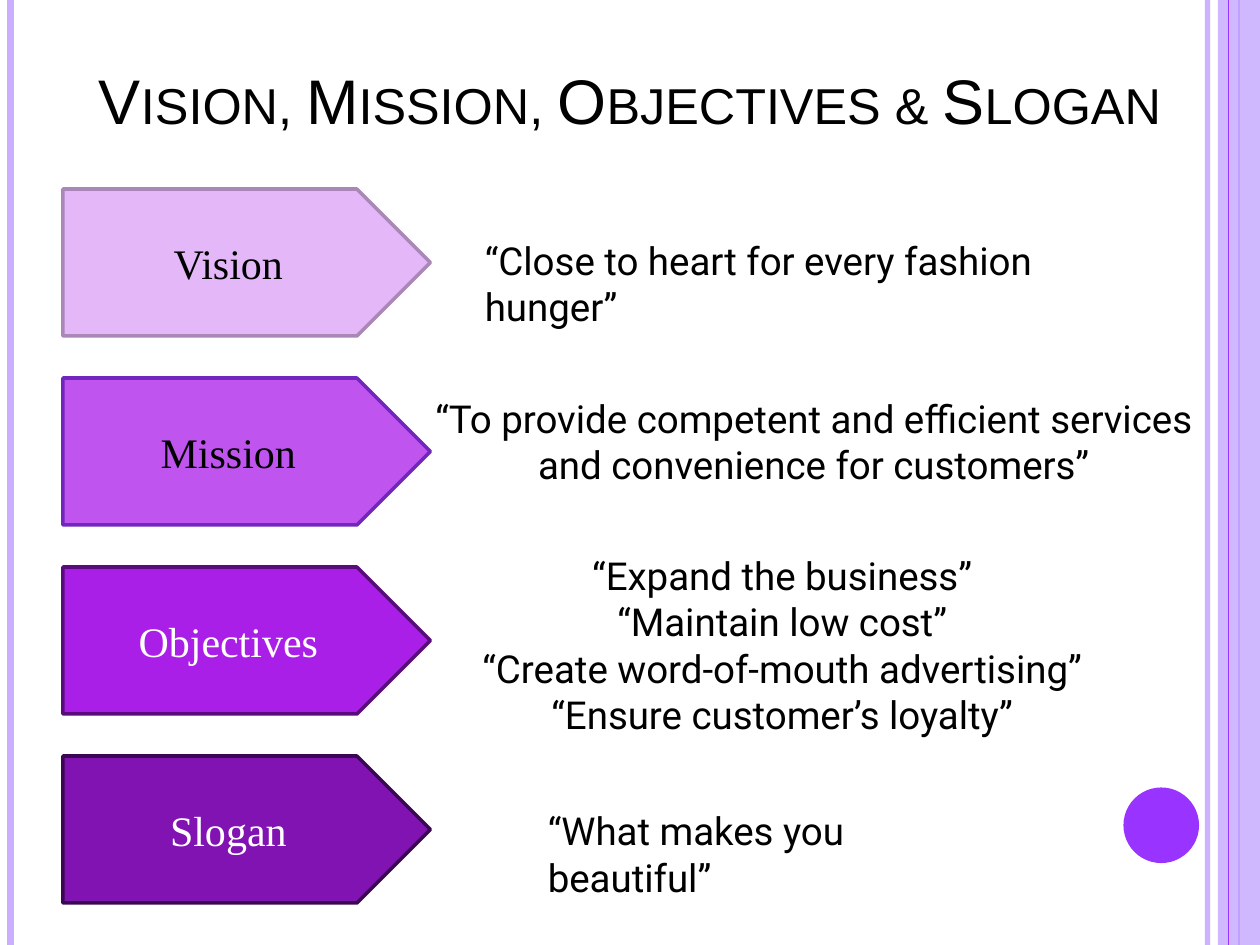
import dataclasses

import lxml.etree
import pptx
import pptx.dml.color
import pptx.enum.shapes
import pptx.enum.text
import pptx.oxml.ns
import pptx.util

ALIGN = pptx.enum.text.PP_ALIGN
ANCHOR = pptx.enum.text.MSO_ANCHOR
SHAPE = pptx.enum.shapes.MSO_SHAPE


@dataclasses.dataclass(frozen=True)
class Theme:
    black: str = "000000"
    white: str = "FFFFFF"
    lilac: str = "CAAEFF"
    violet: str = "9933FF"
    title_font: str = "Arial"
    label_font: str = "Times New Roman"
    quote_font: str = "Roboto"
    title_size: int = 36
    label_size: int = 24
    quote_size: int = 22


class SlideBuilder:
    """Draws styled elements on one slide, placed on a grid of 120 columns by 90 rows."""

    columns, rows = 120, 90

    def __init__(self, presentation, theme):
        self.theme = theme
        self.cell_width = presentation.slide_width / self.columns
        self.cell_height = presentation.slide_height / self.rows
        self.slide = presentation.slides.add_slide(presentation.slide_layouts[1])

    def x(self, column):
        return pptx.util.Emu(round(column * self.cell_width))

    def y(self, row):
        return pptx.util.Emu(round(row * self.cell_height))

    def box(self, column, row, width, height):
        return self.x(column), self.y(row), self.x(width), self.y(height)

    def color(self, target, value):
        target.rgb = pptx.dml.color.RGBColor.from_string(value)

    def opacity(self, shape, percent):
        color = next(shape.element.spPr.iter(pptx.oxml.ns.qn("a:srgbClr")))
        alpha = lxml.etree.SubElement(color, pptx.oxml.ns.qn("a:alpha"))
        alpha.set("val", str(percent * 1000))

    def add_lines(self, shape, lines, font, size, color, align=ALIGN.CENTER):
        frame = shape.text_frame
        frame.word_wrap = True
        for index, line in enumerate(lines):
            paragraph = frame.add_paragraph() if index else frame.paragraphs[0]
            paragraph.alignment = align
            paragraph.space_before = pptx.util.Pt(0)
            run = paragraph.add_run()
            run.text = line
            run.font.name = font
            run.font.size = pptx.util.Pt(size)
            self.color(run.font.color, color)

    def place(self, shape, box, anchor):
        shape.left, shape.top, shape.width, shape.height = box
        shape.text_frame.vertical_anchor = anchor
        shape.text_frame.auto_size = pptx.enum.text.MSO_AUTO_SIZE.NONE
        shape.element.getparent().append(shape.element)

    def rule(self, column, color, width, opacity=100):
        line = self.slide.shapes.add_connector(
            pptx.enum.shapes.MSO_CONNECTOR.STRAIGHT,
            self.x(column), 0, self.x(column), self.y(self.rows))
        self.color(line.line.color, color)
        line.line.width = pptx.util.Pt(width)
        if opacity < 100:
            self.opacity(line, opacity)
        lxml.etree.SubElement(line.element.spPr, pptx.oxml.ns.qn("a:effectLst"))

    def shape(self, kind, box, fill, outline=None, opacity=100):
        shape = self.slide.shapes.add_shape(kind, *self.box(*box))
        shape.shadow.inherit = False
        shape.fill.solid()
        self.color(shape.fill.fore_color, fill)
        if opacity < 100:
            self.opacity(shape, opacity)
        if outline:
            self.color(shape.line.color, outline)
            shape.line.width = pptx.util.Pt(2)
        else:
            shape.line.fill.background()
        return shape

    def title(self, text, box):
        title = self.slide.shapes.title
        self.place(title, self.box(*box), ANCHOR.MIDDLE)
        theme = self.theme
        self.add_lines(title, [text], theme.title_font, theme.title_size, theme.black)
        for properties in title.element.iter(pptx.oxml.ns.qn("a:rPr")):
            properties.set("cap", "small")

    def label(self, text, box, fill, outline, color):
        arrow = self.shape(SHAPE.PENTAGON, box, fill, outline)
        arrow.text_frame.vertical_anchor = ANCHOR.MIDDLE
        self.add_lines(arrow, [text], self.theme.label_font, self.theme.label_size, color)

    def quote(self, text, box, align):
        theme = self.theme
        textbox = self.slide.shapes.add_textbox(*self.box(*box))
        self.add_lines(textbox, [text], theme.quote_font, theme.quote_size, theme.black, align)

    def quote_list(self, lines, box):
        theme = self.theme
        body = self.slide.placeholders[1]
        self.place(body, self.box(*box), ANCHOR.TOP)
        self.add_lines(body, lines, theme.quote_font, theme.quote_size, theme.black)
        for properties in body.element.iter(pptx.oxml.ns.qn("a:pPr")):
            properties.set("marL", "0")
            properties.set("indent", "0")
            lxml.etree.SubElement(properties, pptx.oxml.ns.qn("a:buNone"))


def main():
    presentation = pptx.Presentation()
    presentation.slide_width = pptx.util.Inches(10)
    presentation.slide_height = pptx.util.Inches(7.5)
    theme = Theme()
    builder = SlideBuilder(presentation, theme)

    builder.rule(115, theme.lilac, 3, opacity=93)
    builder.rule(1, theme.lilac, 4.5)
    builder.rule(118, theme.violet, 1.5)
    builder.shape(SHAPE.RECTANGLE, (116, 0, 4, 90), theme.lilac, opacity=87)
    builder.rule(117, theme.violet, 0.75)
    builder.shape(SHAPE.OVAL, (107, 75, 7.2, 7.2), theme.violet)

    builder.title("Vision, Mission, Objectives & Slogan", (3, 1, 114, 17))

    labels = [
        ("Vision", "E4B7F8", "A987B7", theme.black),
        ("Mission", "BF55EE", "7126BD", theme.black),
        ("Objectives", "AA1FE8", "590C7C", theme.white),
        ("Slogan", "8013B1", "3B0753", theme.white),
    ]
    for index, (text, fill, outline, color) in enumerate(labels):
        builder.label(text, (6, 18 + 18 * index, 35, 14), fill, outline, color)

    builder.quote("“Close to heart for every fashion hunger”",
                  (45, 22, 65.8, 5.6), ALIGN.LEFT)
    builder.quote("“To provide competent and efficient services and convenience for customers”",
                  (40, 37, 75, 10), ALIGN.CENTER)
    builder.quote_list(["“Expand the business”", "“Maintain low cost”",
                        "“Create word-of-mouth advertising”",
                        "“Ensure customer’s loyalty”"], (37, 52, 75, 19))
    builder.quote("“What makes you beautiful”", (51, 76.3, 46.3, 5.6), ALIGN.LEFT)

    presentation.save("out.pptx")


if __name__ == "__main__":
    main()
